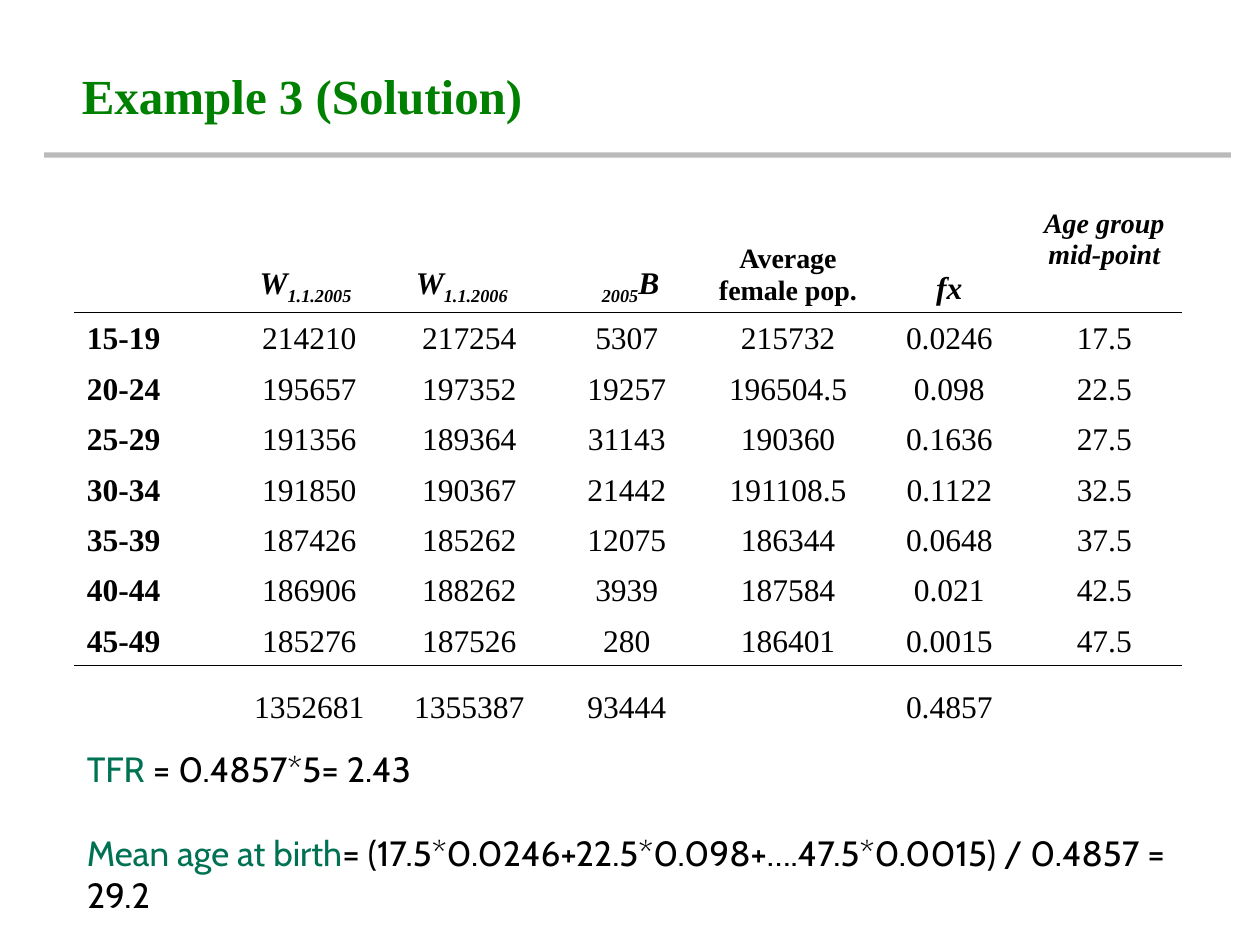
import dataclasses

import lxml.etree
import pptx
import pptx.dml.color
import pptx.enum.shapes
import pptx.enum.text
import pptx.oxml.ns
import pptx.util

ALIGN = pptx.enum.text.PP_ALIGN
ANCHOR = pptx.enum.text.MSO_ANCHOR
qn = pptx.oxml.ns.qn


@dataclasses.dataclass(frozen=True)
class Theme:
    serif: str = "Times New Roman"
    sans: str = "Cabin"
    ink: str = "000000"
    title: str = "008000"
    accent: str = "007254"
    rule: str = "777777"
    title_size: int = 28
    body_size: int = 20
    cell_size: int = 18
    label_size: int = 16


class SlideBuilder:
    """Holds the theme and the current page; lengths are shares of the slide."""

    def __init__(self, deck, theme):
        self.deck, self.theme = deck, theme
        self.page = deck.slides.add_slide(deck.slide_layouts[5])

    def x(self, share):
        return round(self.deck.slide_width * share)

    def y(self, share):
        return round(self.deck.slide_height * share)

    def box(self, left, top, width, height):
        return self.x(left), self.y(top), self.x(width), self.y(height)

    def span(self, para, text, color, baseline=0, **formats):
        span = para.add_run()
        span.text = text
        for name, value in formats.items():
            setattr(span.font, name, value)
        span.font.color.rgb = pptx.dml.color.RGBColor.from_string(color)
        if baseline:
            span.font._element.set("baseline", str(baseline * 1000))

    def title(self, text, *place):
        shape = self.page.shapes.title
        shape.left, shape.top, shape.width, shape.height = self.box(*place)
        frame = shape.text_frame
        settings = {"word_wrap": False, "vertical_anchor": ANCHOR.TOP,
                    "auto_size": pptx.enum.text.MSO_AUTO_SIZE.NONE}
        for name, value in settings.items():
            setattr(frame, name, value)
        para = frame.paragraphs[0]
        para.alignment = ALIGN.LEFT
        self.span(para, text, self.theme.title, name=self.theme.serif,
                  size=pptx.util.Pt(self.theme.title_size), bold=True)

    def rule(self, left, right, top):
        line = self.page.shapes.add_connector(
            pptx.enum.shapes.MSO_CONNECTOR.STRAIGHT,
            self.x(left), self.y(top), self.x(right), self.y(top))
        line.line.width = pptx.util.Pt(3)
        line.line.color.rgb = pptx.dml.color.RGBColor.from_string(self.theme.rule)
        color = line._element.spPr.find(".//" + qn("a:srgbClr"))
        lxml.etree.SubElement(color, qn("a:alpha"), val="50000")
        lxml.etree.SubElement(line._element.spPr, qn("a:effectLst"))

    def borders(self, cell, ruled_sides):
        properties = cell._tc.get_or_add_tcPr()
        for side in "LRTB":
            ruled = side in ruled_sides
            line = lxml.etree.SubElement(properties, qn("a:ln" + side),
                                         w="12700" if ruled else "0")
            fill = lxml.etree.SubElement(
                line, qn("a:solidFill" if ruled else "a:noFill"))
            if ruled:
                lxml.etree.SubElement(fill, qn("a:srgbClr"), val=self.theme.ink)

    def cell(self, cell, spans, ruled_sides, align, margins):
        """Fill one cell; spans are (text, formats) pairs."""
        self.borders(cell, ruled_sides)
        cell.fill.background()
        cell.vertical_anchor = ANCHOR.BOTTOM
        for name, inches in margins.items():
            setattr(cell, name, pptx.util.Inches(inches))
        para = cell.text_frame.paragraphs[0]
        para.alignment = align
        for text, formats in spans:
            style = {"name": self.theme.serif,
                     "size": pptx.util.Pt(self.theme.cell_size), "bold": False}
            self.span(para, text, self.theme.ink, **{**style, **formats})

    def table(self, headers, rows, widths, heights, ruled_after, *place):
        table = self.page.shapes.add_table(
            len(heights), len(widths), *self.box(*place)).table
        table.first_row = table.horz_banding = False
        for column, share in zip(table.columns, widths):
            column.width = self.x(share)
        for row, share in zip(table.rows, heights):
            row.height = self.y(share)
        for c, (spans, margins) in enumerate(headers):
            self.cell(table.cell(0, c), spans, "B", ALIGN.CENTER, margins)
        for r, values in enumerate(rows, 1):
            sides = ("T" if r - 1 in ruled_after else "") + ("B" if r in ruled_after else "")
            for c, value in enumerate(values):
                spans = [(value, {"bold": c == 0})] if value else []
                align = ALIGN.CENTER if c else ALIGN.LEFT
                self.cell(table.cell(r, c), spans, sides, align, {})

    def results(self, lines, gap, *place):
        frame = self.page.shapes.add_textbox(*self.box(*place)).text_frame
        frame.word_wrap = True
        for i, (label, formula) in enumerate(lines):
            para = frame.add_paragraph() if i else frame.paragraphs[0]
            para.space_before = pptx.util.Pt(gap if i else 0)
            for text, color in ((label, self.theme.accent), (formula, self.theme.ink)):
                self.span(para, text, color, name=self.theme.sans,
                          size=pptx.util.Pt(self.theme.body_size))


def main():
    deck = pptx.Presentation()
    deck.slide_width, deck.slide_height = pptx.util.Inches(10), pptx.util.Inches(7.5)
    theme = Theme()
    slide = SlideBuilder(deck, theme)

    # Title and the rule under it
    slide.title("Example 3 (Solution)", 0.055, 0.47 / 7.5, 0.374, 0.57 / 7.5)
    slide.rule(0.035, 0.977, 1.23 / 7.5)

    # Column headings, with margins that nudge them in their cells
    symbol = {"bold": True, "italic": True}
    index = {**symbol, "baseline": -25}
    label = {"bold": True, "size": pptx.util.Pt(theme.label_size)}
    headers = [
        ([], {}),
        ([("W", symbol), ("1.1.2005", index)], {"margin_right": 0.16}),
        ([("W", symbol), ("1.1.2006", index)], {"margin_right": 0.22}),
        ([("2005", index), ("B", symbol)], {"margin_left": 0.16}),
        ([("Average female pop.", label)], {}),
        ([("fx", symbol)], {}),
        ([("Age group mid-point", {**label, "italic": True})], {"margin_bottom": 0.33}),
    ]

    # Fertility by age group, closed by the totals
    rows = [
        ("15-19", "214210", "217254", "5307", "215732", "0.0246", "17.5"),
        ("20-24", "195657", "197352", "19257", "196504.5", "0.098", "22.5"),
        ("25-29", "191356", "189364", "31143", "190360", "0.1636", "27.5"),
        ("30-34", "191850", "190367", "21442", "191108.5", "0.1122", "32.5"),
        ("35-39", "187426", "185262", "12075", "186344", "0.0648", "37.5"),
        ("40-44", "186906", "188262", "3939", "187584", "0.021", "42.5"),
        ("45-49", "185276", "187526", "280", "186401", "0.0015", "47.5"),
        ("", "1352681", "1355387", "93444", "", "0.4857", ""),
    ]
    widths = [0.123, 0.127, 0.127, 0.123, 0.133, 0.123, 0.123]
    heights = [inches / 7.5 for inches in [0.93] + [0.4] * 7 + [0.53]]
    slide.table(headers, rows, widths, heights, (0, 7),
                0.059, 1.55 / 7.5, sum(widths), sum(heights))

    # Results
    slide.results([
        ("TFR", " = 0.4857*5= 2.43"),
        ("Mean age at birth", "= (17.5*0.0246+22.5*0.098+….47.5*0.0015) / 0.4857 = 29.2"),
    ], 24, 0.059, 5.88 / 7.5, 0.898, 1.45 / 7.5)

    deck.save("out.pptx")


if __name__ == "__main__":
    main()
